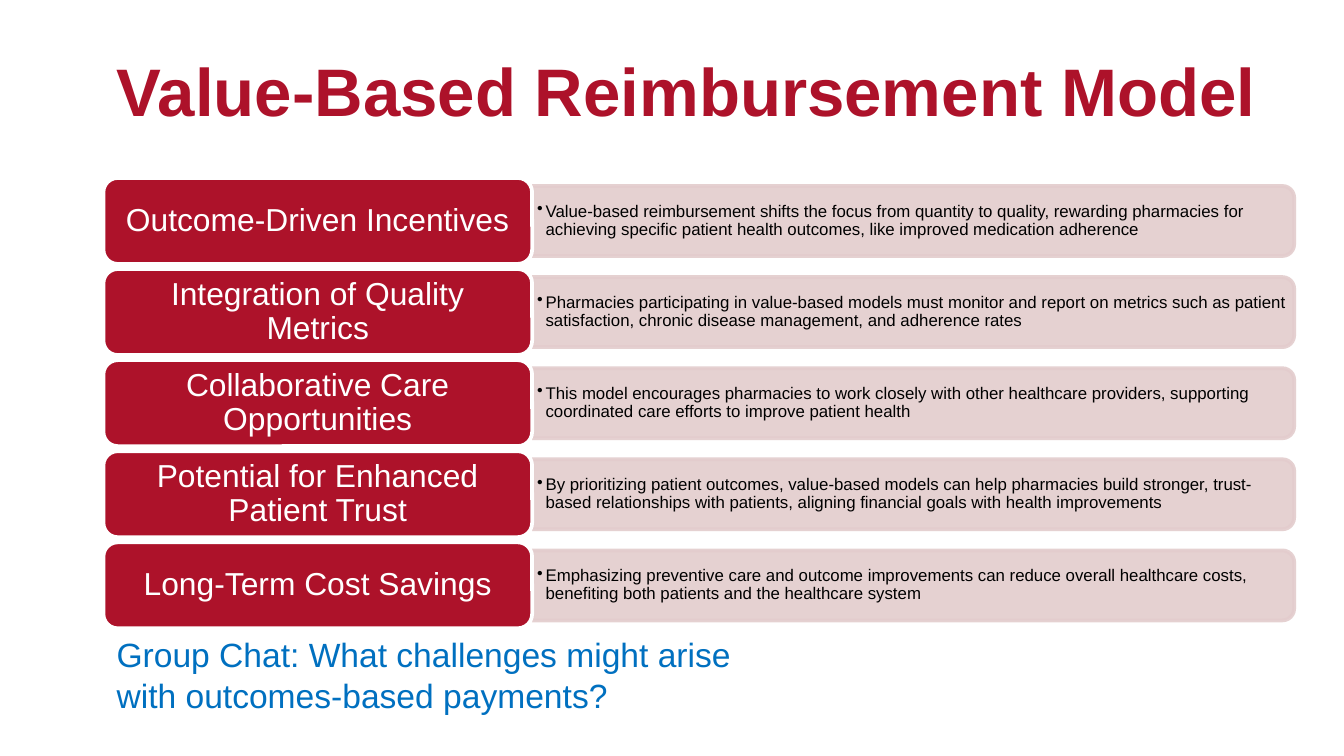
from lxml import etree
from pptx import Presentation
from pptx.dml.color import RGBColor
from pptx.enum import shapes, text
from pptx.oxml import ns
from pptx.util import Pt

COLORS = {"red": "AD122A", "pink": "E3CCCD", "blue": "0070C0",
          "white": "FFFFFF", "black": "000000"}
ROWS = [
    ("Outcome-Driven Incentives",
     "Value-based reimbursement shifts the focus from quantity to quality, rewarding pharmacies "
     "for achieving specific patient health outcomes, like improved medication adherence"),
    ("Integration of Quality Metrics",
     "Pharmacies participating in value-based models must monitor and report on metrics such as "
     "patient satisfaction, chronic disease management, and adherence rates"),
    ("Collaborative Care Opportunities",
     "This model encourages pharmacies to work closely with other healthcare providers, "
     "supporting coordinated care efforts to improve patient health"),
    ("Potential for Enhanced Patient Trust",
     "By prioritizing patient outcomes, value-based models can help pharmacies build stronger, "
     "trust-based relationships with patients, aligning financial goals with health improvements"),
    ("Long-Term Cost Savings",
     "Emphasizing preventive care and outcome improvements can reduce overall healthcare costs, "
     "benefiting both patients and the healthcare system"),
]
LEFT = 55.4
FIRST_CENTER, ROW_PITCH = 118.4, 48.8
LABEL_WIDTH, LABEL_HEIGHT = 229.7, 46.1
PANEL_WIDTH, PANEL_HEIGHT = 408.2, 37.5
DETAIL_WIDTH, DETAIL_HEIGHT = 406.1, 33.8


def write(box, words, size, color, bold=False, align=text.PP_ALIGN.LEFT,
          anchor=text.MSO_ANCHOR.MIDDLE, margins=(7.2, 3.6), spacing=0.9, bullet_indent=None):
    frame = box.text_frame
    frame.word_wrap = True
    frame.auto_size = text.MSO_AUTO_SIZE.NONE
    frame.vertical_anchor = anchor
    frame.margin_left = frame.margin_right = Pt(margins[0])
    frame.margin_top = frame.margin_bottom = Pt(margins[1])
    para = frame.paragraphs[0]
    para.alignment = align
    para.line_spacing = spacing
    if bullet_indent:
        props = para._p.get_or_add_pPr()
        props.set("marL", str(Pt(bullet_indent)))
        props.set("indent", str(-Pt(bullet_indent)))
        etree.SubElement(props, ns.qn("a:buChar"), char="•")
    span = para.add_run()
    span.text = words
    span.font.name = "Arial"
    span.font.size = Pt(size)
    span.font.bold = bold
    span.font.color.rgb = RGBColor.from_string(COLORS[color])


def add_block(kind, left, top, width, height, fill, line):
    block = page.shapes.add_shape(kind, Pt(left), Pt(top), Pt(width), Pt(height))
    block.shadow.inherit = False
    block.fill.solid()
    block.fill.fore_color.rgb = RGBColor.from_string(COLORS[fill])
    block.line.color.rgb = RGBColor.from_string(COLORS[line])
    block.line.width = Pt(2)
    return block


deck = Presentation()
deck.slide_width, deck.slide_height = Pt(720), Pt(405)
page = deck.slides.add_slide(deck.slide_layouts[5])

title = page.shapes.title
title.left, title.top, title.width, title.height = Pt(LEFT), Pt(14.4), Pt(637.2), Pt(72.7)
write(title, "Value-Based Reimbursement Model", 36, "red", bold=True, margins=(7.2, 0))

label_right = LEFT + LABEL_WIDTH
for index, (heading, detail) in enumerate(ROWS):
    center = FIRST_CENTER + index * ROW_PITCH

    # The panel is drawn upright and turned, so its rounded top faces right.
    panel = add_block(shapes.MSO_SHAPE.ROUND_2_SAME_RECTANGLE,
                      label_right + (PANEL_WIDTH - PANEL_HEIGHT) / 2, center - PANEL_WIDTH / 2,
                      PANEL_HEIGHT, PANEL_WIDTH, "pink", "pink")
    panel.rotation = 90
    for color in panel._element.spPr.iter(ns.qn("a:srgbClr")):
        etree.SubElement(color, ns.qn("a:alpha"), val="90000")

    detail_box = page.shapes.add_textbox(Pt(label_right), Pt(center - DETAIL_HEIGHT / 2),
                                         Pt(DETAIL_WIDTH), Pt(DETAIL_HEIGHT))
    write(detail_box, detail, 9, "black", margins=(2.7, 1.35), bullet_indent=4.5)

    label = add_block(shapes.MSO_SHAPE.ROUNDED_RECTANGLE, LEFT, center - LABEL_HEIGHT / 2,
                      LABEL_WIDTH, LABEL_HEIGHT, "red", "white")
    write(label, heading, 17, "white", align=text.PP_ALIGN.CENTER, margins=(7.2, 4.8))

question = page.shapes.add_textbox(Pt(LEFT), Pt(336.2), Pt(360), Pt(51))
write(question, "Group Chat: What challenges might arise with outcomes-based payments?", 18, "blue",
      anchor=text.MSO_ANCHOR.TOP, spacing=1.0)

deck.save("out.pptx")
